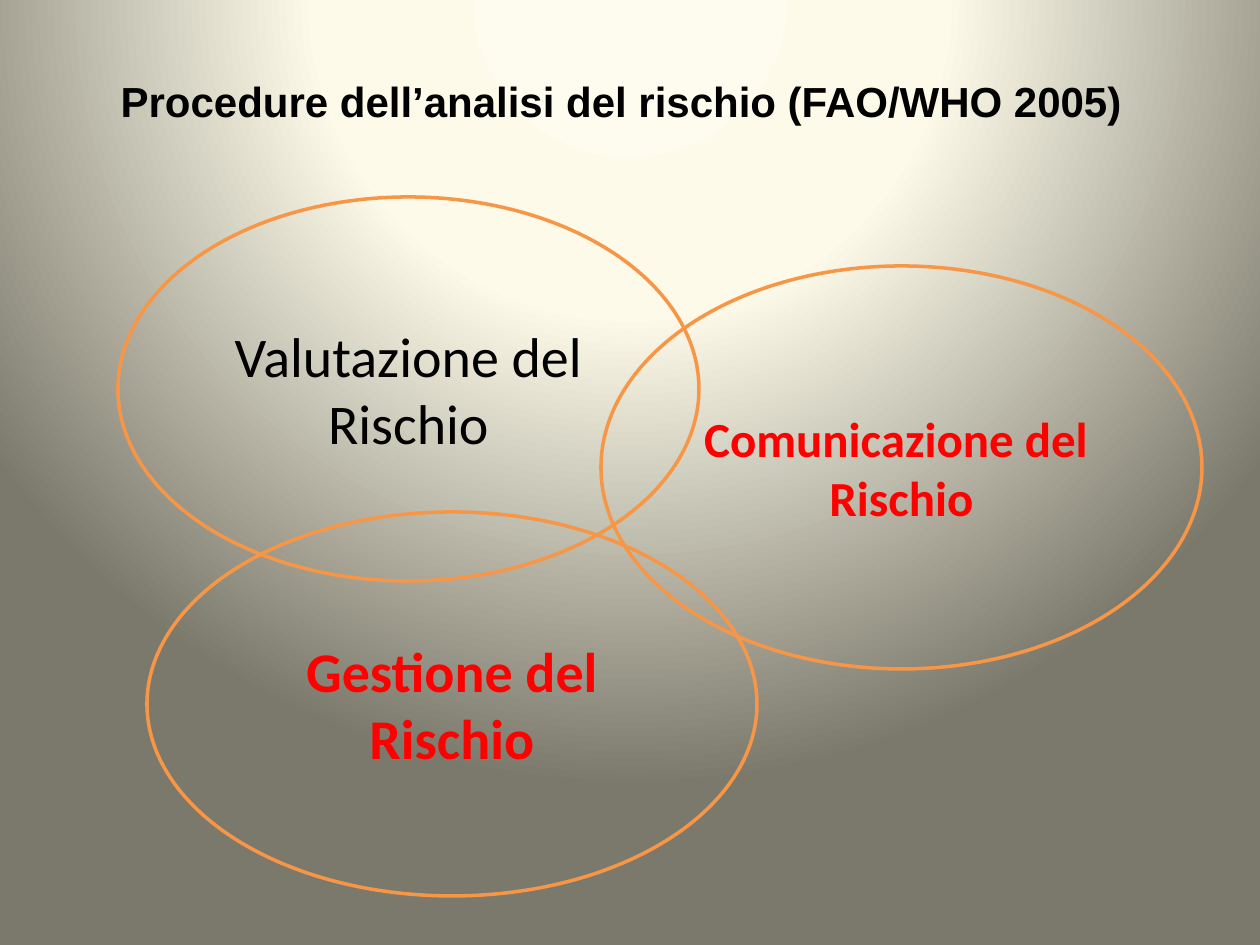
from lxml.etree import SubElement
from pptx import Presentation
from pptx.dml.color import RGBColor
from pptx.enum.shapes import MSO_SHAPE
from pptx.enum.text import MSO_ANCHOR, MSO_AUTO_SIZE, PP_ALIGN
from pptx.oxml.ns import qn
from pptx.util import Pt

PX = 914400 // 126
COLORS = {"text": "000000", "accent": "FF0000", "ring": "F79646"}
BACKGROUND_STOPS = [(0, "FEFCEE"), (40, "FDFAEA"), (100, "7B796B")]
# label, box in px, size, color, bold
CIRCLES = [
    ("Comunicazione del  Rischio", (601, 266, 601, 403), 28, "accent", True),
    ("Gestione del Rischio", (147, 512, 610, 384), 32, "accent", True),
    ("Valutazione del Rischio", (118, 197, 581, 384), 32, "text", False),
]


def color(name):
    return RGBColor.from_string(COLORS[name])


class SlideBuilder:
    def __init__(self, slide):
        self.slide = slide

    def background(self, stops, center):
        """Radial gradient; center is left, top, right, bottom in percent."""
        self.slide.background.fill.gradient()
        gradient = self.slide.element.find(".//" + qn("a:gradFill"))
        for child in list(gradient):
            gradient.remove(child)
        stop_list = SubElement(gradient, qn("a:gsLst"))
        for position, value in stops:
            stop = SubElement(stop_list, qn("a:gs"), pos=str(position * 1000))
            SubElement(stop, qn("a:srgbClr"), val=value)
        radial = SubElement(gradient, qn("a:path"), path="circle")
        edges = {side: str(value * 1000) for side, value in zip("ltrb", center)}
        SubElement(radial, qn("a:fillToRect"), **edges)

    def style(self, paragraph, name, size, color_name, bold, align):
        paragraph.alignment = align
        font = paragraph.font
        font.name, font.size, font.bold = name, Pt(size), bold
        font.color.rgb = color(color_name)

    def title(self, text, box):
        title = self.slide.shapes.title
        title.left, title.top, title.width, title.height = (v * PX for v in box)
        frame = title.text_frame
        frame.text = text
        frame.word_wrap = False
        frame.auto_size = MSO_AUTO_SIZE.SHAPE_TO_FIT_TEXT
        frame.vertical_anchor = MSO_ANCHOR.TOP
        self.style(frame.paragraphs[0], "Arial", 24, "text", True, PP_ALIGN.LEFT)

    def circle(self, text, box, size, color_name, bold):
        shape = self.slide.shapes.add_shape(MSO_SHAPE.OVAL, *(v * PX for v in box))
        shape.shadow.inherit = False
        shape.fill.background()
        shape.line.color.rgb = color("ring")
        shape.line.width = Pt(2)
        frame = shape.text_frame
        frame.text = text
        frame.word_wrap = True
        frame.vertical_anchor = MSO_ANCHOR.MIDDLE
        self.style(frame.paragraphs[0], "Calibri", size, color_name, bold, PP_ALIGN.CENTER)


def main():
    presentation = Presentation()
    presentation.slide_width, presentation.slide_height = 1260 * PX, 945 * PX
    title_only = presentation.slide_layouts[5]
    builder = SlideBuilder(presentation.slides.add_slide(title_only))
    builder.background(BACKGROUND_STOPS, (50, -80, 50, 180))
    builder.title("Procedure dell’analisi del rischio (FAO/WHO 2005)", (108, 69, 1046, 63))
    for circle in CIRCLES:
        builder.circle(*circle)
    presentation.save("out.pptx")


if __name__ == "__main__":
    main()
